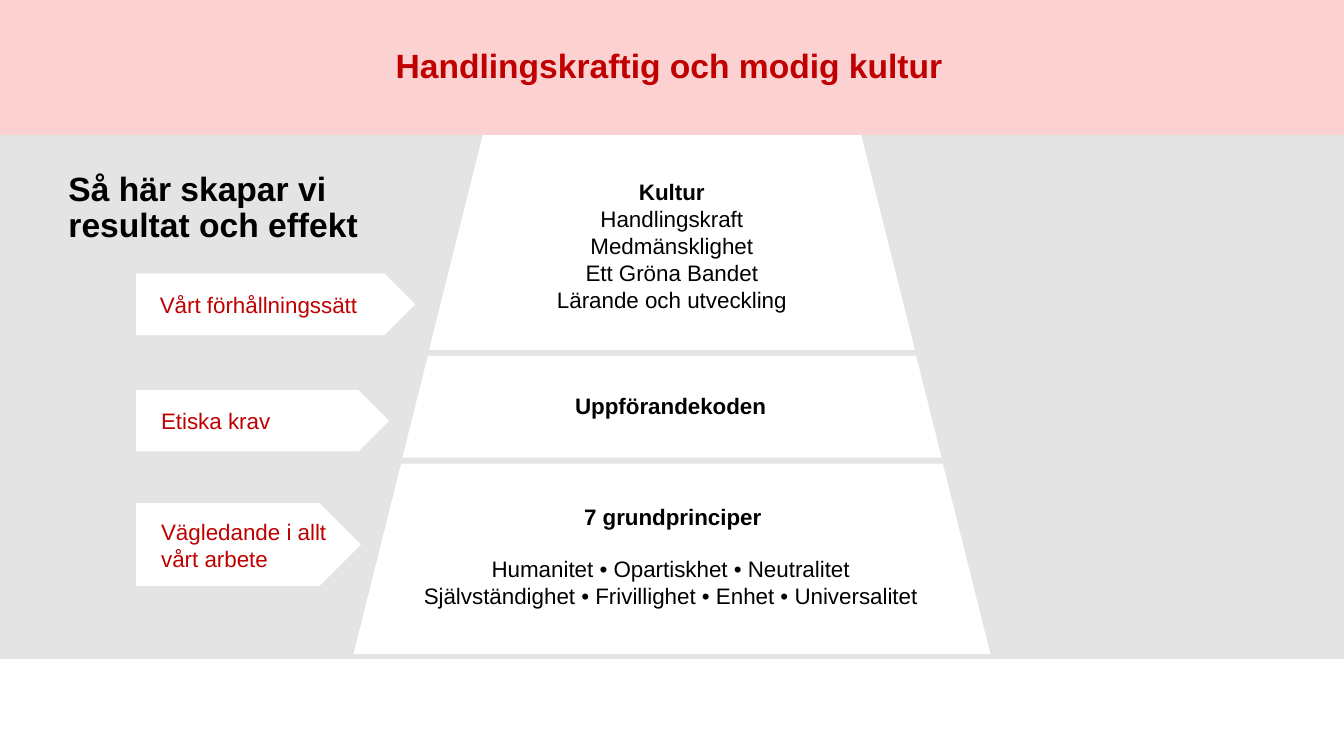
from dataclasses import dataclass

from pptx import Presentation
from pptx.dml.color import RGBColor
from pptx.enum.shapes import MSO_SHAPE
from pptx.enum.text import MSO_ANCHOR, PP_ALIGN
from pptx.shapes.autoshape import Shape
from pptx.slide import Slide
from pptx.text.text import TextFrame
from pptx.util import Pt

RECTANGLE = MSO_SHAPE.RECTANGLE
TRAPEZOID = MSO_SHAPE.TRAPEZOID
ARROW = MSO_SHAPE.PENTAGON
TOP, MIDDLE = MSO_ANCHOR.TOP, MSO_ANCHOR.MIDDLE
LEFT, CENTER = PP_ALIGN.LEFT, PP_ALIGN.CENTER

WHITE = RGBColor(0xFF, 0xFF, 0xFF)
BLACK = RGBColor(0x00, 0x00, 0x00)
RED = RGBColor(0xC0, 0x00, 0x00)
PINK = RGBColor(0xFB, 0xD1, 0xD1)
GREY = RGBColor(0xE4, 0xE4, 0xE4)

FONT = "Arial"
SLIDE_WIDTH, SLIDE_HEIGHT = 960, 540
BANNER_HEIGHT = 96.5
PYRAMID_CENTER = 480
ARROW_LEFT = 97.2


@dataclass(frozen=True)
class Box:
    left: float
    top: float
    width: float
    height: float


@dataclass(frozen=True)
class Line:
    text: str
    bold: bool = False


@dataclass(frozen=True)
class TextBlock:
    box: Box
    lines: tuple[Line, ...]
    size: float = 16
    color: RGBColor = BLACK
    alignment: PP_ALIGN = CENTER
    line_spacing: float = 1.0


@dataclass(frozen=True)
class Tier:
    top: float
    width: float
    height: float


@dataclass(frozen=True)
class ArrowLabel:
    text: str
    top: float
    width: float
    height: float
    text_box: Box


BANNER = TextBlock(
    Box(0, 0, SLIDE_WIDTH, BANNER_HEIGHT),
    (Line("Handlingskraftig och modig kultur", True),),
    size=24, color=RED, line_spacing=0.9,
)
TIERS = (
    Tier(331.2, 455, 136.1),
    Tier(254.2, 385.2, 72.7),
    Tier(BANNER_HEIGHT, 347, 153.4),
)
TEXT_BLOCKS = (
    TextBlock(
        Box(41.8, 119.5, 265, 60.5),
        (Line("Så här skapar vi resultat och effekt", True),),
        size=24, alignment=LEFT, line_spacing=0.9,
    ),
    TextBlock(
        Box(333.4, 123.8, 293, 104.4),
        (
            Line("Kultur", True),
            Line("Handlingskraft"),
            Line("Medmänsklighet"),
            Line("Ett Gröna Bandet"),
            Line("Lärande och utveckling"),
        ),
    ),
    TextBlock(Box(329, 276.5, 300.2, 26.6), (Line("Uppförandekoden", True),)),
    TextBlock(Box(330.5, 355.7, 300.2, 26.6), (Line("7 grundprinciper", True),)),
    TextBlock(
        Box(252.7, 393.1, 452.9, 60.5),
        (
            Line("Humanitet • Opartiskhet • Neutralitet"),
            Line("Självständighet • Frivillighet • Enhet • Universalitet"),
        ),
    ),
)
ARROW_LABELS = (
    ArrowLabel("Vårt förhållningssätt", 195.4, 199.4, 43.9,
               Box(107.1, 204.5, 165.6, 26.6)),
    ArrowLabel("Etiska krav", 278.6, 180.7, 43.9,
               Box(108, 287.3, 165.6, 26.6)),
    ArrowLabel("Vägledande i allt vårt arbete", 359.4, 160.6, 59,
               Box(108, 366.5, 137.5, 41)),
)


def place(box: Box) -> tuple[Pt, Pt, Pt, Pt]:
    return Pt(box.left), Pt(box.top), Pt(box.width), Pt(box.height)


def add_filled_shape(slide: Slide, kind: MSO_SHAPE, box: Box, fill: RGBColor) -> Shape:
    shape = slide.shapes.add_shape(kind, *place(box))
    shape.shadow.inherit = False
    shape.fill.solid()
    shape.fill.fore_color.rgb = fill
    shape.line.fill.background()
    return shape


def write_lines(text_frame: TextFrame, block: TextBlock) -> None:
    text_frame.word_wrap = True
    for index, line in enumerate(block.lines):
        paragraph = text_frame.paragraphs[0] if index == 0 else text_frame.add_paragraph()
        paragraph.alignment = block.alignment
        paragraph.line_spacing = block.line_spacing
        run = paragraph.add_run()
        run.text = line.text
        font_format = {"name": FONT, "size": Pt(block.size), "bold": line.bold}
        for attribute, value in font_format.items():
            setattr(run.font, attribute, value)
        run.font.color.rgb = block.color


def add_text(slide: Slide, block: TextBlock) -> None:
    text_box = slide.shapes.add_textbox(*place(block.box))
    text_box.text_frame.vertical_anchor = TOP
    write_lines(text_box.text_frame, block)


def add_background(slide: Slide) -> None:
    """Draw the grey band and the pink title banner above it."""
    band_box = Box(0, BANNER_HEIGHT, SLIDE_WIDTH, 373.5)
    band = add_filled_shape(slide, RECTANGLE, band_box, GREY)
    band.line.color.rgb = GREY
    band.line.width = Pt(1)

    banner = add_filled_shape(slide, RECTANGLE, BANNER.box, PINK)
    frame_format = {
        "vertical_anchor": MIDDLE,
        "margin_left": Pt(2.9),
        "margin_right": Pt(7.2),
        "margin_top": Pt(3.6),
        "margin_bottom": Pt(3.6),
    }
    for attribute, value in frame_format.items():
        setattr(banner.text_frame, attribute, value)
    write_lines(banner.text_frame, BANNER)


def add_tier(slide: Slide, tier: Tier) -> None:
    left = PYRAMID_CENTER - tier.width / 2
    box = Box(left, tier.top, tier.width, tier.height)
    trapezoid = add_filled_shape(slide, TRAPEZOID, box, WHITE)
    trapezoid.adjustments[0] = 0.25


def add_arrow_label(slide: Slide, label: ArrowLabel) -> None:
    box = Box(ARROW_LEFT, label.top, label.width, label.height)
    add_filled_shape(slide, ARROW, box, WHITE)
    add_text(slide, TextBlock(label.text_box, (Line(label.text),), color=RED, alignment=LEFT))


def main() -> None:
    presentation = Presentation()
    presentation.slide_width = Pt(SLIDE_WIDTH)
    presentation.slide_height = Pt(SLIDE_HEIGHT)
    slide = presentation.slides.add_slide(presentation.slide_layouts[6])

    add_background(slide)
    for tier in TIERS:
        add_tier(slide, tier)
    for block in TEXT_BLOCKS:
        add_text(slide, block)
    for label in ARROW_LABELS:
        add_arrow_label(slide, label)

    presentation.save("out.pptx")


if __name__ == "__main__":
    main()
